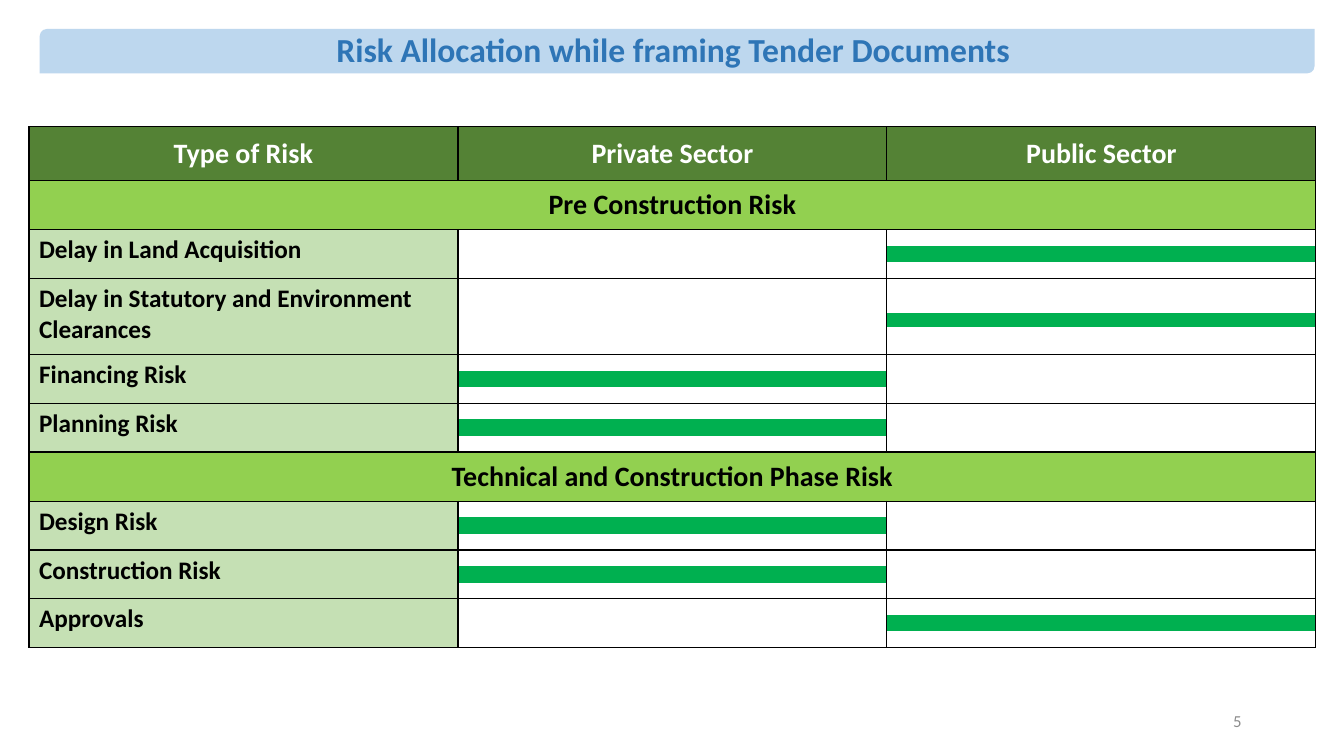
import pptx
import pptx.dml.color
import pptx.enum.shapes
import pptx.enum.text
import pptx.oxml
import pptx.oxml.ns
import pptx.util

Cm = pptx.util.Cm
Pt = pptx.util.Pt
RGBColor = pptx.dml.color.RGBColor
ALIGN = pptx.enum.text.PP_ALIGN
ANCHOR = pptx.enum.text.MSO_ANCHOR

WHITE = RGBColor(0xFF, 0xFF, 0xFF)
BLACK = RGBColor(0x00, 0x00, 0x00)
GREY = RGBColor(0x8C, 0x8C, 0x8C)
PALE_BLUE = RGBColor(0xBD, 0xD7, 0xEE)
BLUE = RGBColor(0x2E, 0x75, 0xB6)
DARK_GREEN = RGBColor(0x54, 0x82, 0x35)
LIME = RGBColor(0x92, 0xD0, 0x50)
PALE_GREEN = RGBColor(0xC5, 0xE0, 0xB4)
BAR_GREEN = RGBColor(0x00, 0xB0, 0x50)

HEADINGS = ["Type of Risk", "Private Sector", "Public Sector"]
PRIVATE, PUBLIC = 1, 2
THIN = (0.41, 0.41, 0.41)
TALL = (0.86, 0.36, 0.69)

# Each phase: title, then risks as (label, bearer column, heights of its three rows)
PHASES = [
    ("Pre Construction Risk", [
        ("Delay in Land Acquisition", PUBLIC, THIN),
        ("Delay in Statutory and Environment Clearances", PUBLIC, TALL),
        ("Financing Risk", PRIVATE, THIN),
        ("Planning Risk", PRIVATE, THIN),
    ]),
    ("Technical and Construction Phase Risk", [
        ("Design Risk", PRIVATE, THIN),
        ("Construction Risk", PRIVATE, THIN),
        ("Approvals", PUBLIC, THIN),
    ]),
]
HEADING_HEIGHT, PHASE_HEIGHT = 1.36, 1.24


class RiskPage:
    font = "Calibri"

    def __init__(self, deck):
        self.page = deck.slides.add_slide(deck.slide_layouts[6])

    def set_text(self, frame, text, size, color, align, bold=True):
        frame.text = text
        frame.word_wrap = True
        para = frame.paragraphs[0]
        para.alignment = align
        for span in para.runs:
            span.font.name = self.font
            span.font.size = Pt(size)
            span.font.bold = bold
            span.font.color.rgb = color
        return para

    def banner(self, text, left, top, width, height):
        kind = pptx.enum.shapes.MSO_SHAPE.ROUND_2_DIAG_RECTANGLE
        box = self.page.shapes.add_shape(kind, Cm(left), Cm(top), Cm(width), Cm(height))
        box.shadow.inherit = False
        box.fill.solid()
        box.fill.fore_color.rgb = PALE_BLUE
        box.line.fill.background()
        box.text_frame.vertical_anchor = ANCHOR.MIDDLE
        self.set_text(box.text_frame, text, 24, BLUE, ALIGN.CENTER).line_spacing = 0.9

    def page_number(self, text, left, top, width, height):
        box = self.page.shapes.add_textbox(Cm(left), Cm(top), Cm(width), Cm(height))
        box.text_frame.vertical_anchor = ANCHOR.MIDDLE
        self.set_text(box.text_frame, text, 12, GREY, ALIGN.RIGHT, bold=False)

    def table(self, left, top, column_width, heights):
        frame = self.page.shapes.add_table(
            len(heights), len(HEADINGS), Cm(left), Cm(top),
            Cm(column_width * len(HEADINGS)), Cm(sum(heights)))
        grid = frame.table
        grid.first_row = grid.horz_banding = False
        for column in grid.columns:
            column.width = Cm(column_width)
        for row, height in zip(grid.rows, heights):
            row.height = Cm(height)
        return grid

    def cell(self, cell, fill=None, edges="LRTB"):
        properties = cell._tc.get_or_add_tcPr()
        for side in "LRTB":
            paint = '<a:solidFill><a:srgbClr val="000000"/></a:solidFill>'
            if side not in edges:
                paint = "<a:noFill/>"
            properties.append(pptx.oxml.parse_xml(
                f'<a:ln{side} {pptx.oxml.ns.nsdecls("a")} w="12700">{paint}</a:ln{side}>'))
        if fill is None:
            cell.fill.background()
        else:
            cell.fill.solid()
            cell.fill.fore_color.rgb = fill

    def text_cell(self, cell, text, size, color, align, anchor):
        self.set_text(cell.text_frame, text, size, color, align)
        cell.vertical_anchor = anchor

    def empty_cell(self, cell):
        # Tiny end mark and no margins let the thin rows keep their height
        cell.margin_top = cell.margin_bottom = 0
        cell.text_frame.paragraphs[0]._p.append(pptx.oxml.parse_xml(
            f'<a:endParaRPr {pptx.oxml.ns.nsdecls("a")} sz="400"/>'))

    def phase_row(self, grid, row, title):
        for column in range(len(HEADINGS)):
            self.cell(grid.cell(row, column), LIME)
        grid.cell(row, 0).merge(grid.cell(row, len(HEADINGS) - 1))
        self.text_cell(grid.cell(row, 0), title, 20, BLACK, ALIGN.CENTER, ANCHOR.MIDDLE)

    def risk_rows(self, grid, row, label, bearer):
        for step, edges in enumerate(("LRT", "LR", "LRB")):
            self.cell(grid.cell(row + step, 0), PALE_GREEN)
            if step:
                self.empty_cell(grid.cell(row + step, 0))
            for column in (PRIVATE, PUBLIC):
                has_bar = step == 1 and column == bearer
                self.cell(grid.cell(row + step, column), BAR_GREEN if has_bar else None, edges)
                self.empty_cell(grid.cell(row + step, column))
        grid.cell(row, 0).merge(grid.cell(row + 2, 0))
        self.text_cell(grid.cell(row, 0), label, 18, BLACK, ALIGN.LEFT, ANCHOR.TOP)


def main():
    deck = pptx.Presentation()
    deck.slide_width, deck.slide_height = Cm(33.87), Cm(19.05)
    page = RiskPage(deck)

    # Risk table
    heights = [HEADING_HEIGHT]
    for _, risks in PHASES:
        heights.append(PHASE_HEIGHT)
        for _, _, risk_heights in risks:
            heights.extend(risk_heights)
    grid = page.table(0.73, 3.19, 10.81, heights)

    for column, heading in enumerate(HEADINGS):
        page.cell(grid.cell(0, column), DARK_GREEN)
        page.text_cell(grid.cell(0, column), heading, 20, WHITE, ALIGN.CENTER, ANCHOR.MIDDLE)

    row = 1
    for title, risks in PHASES:
        page.phase_row(grid, row, title)
        row += 1
        for label, bearer, risk_heights in risks:
            page.risk_rows(grid, row, label, bearer)
            row += len(risk_heights)

    # Title and page number
    page.banner("Risk Allocation while framing Tender Documents ", 1, 0.73, 32.13, 1.12)
    page.page_number("5", 23.92, 17.66, 7.62, 1.01)

    deck.save("out.pptx")


if __name__ == "__main__":
    main()
